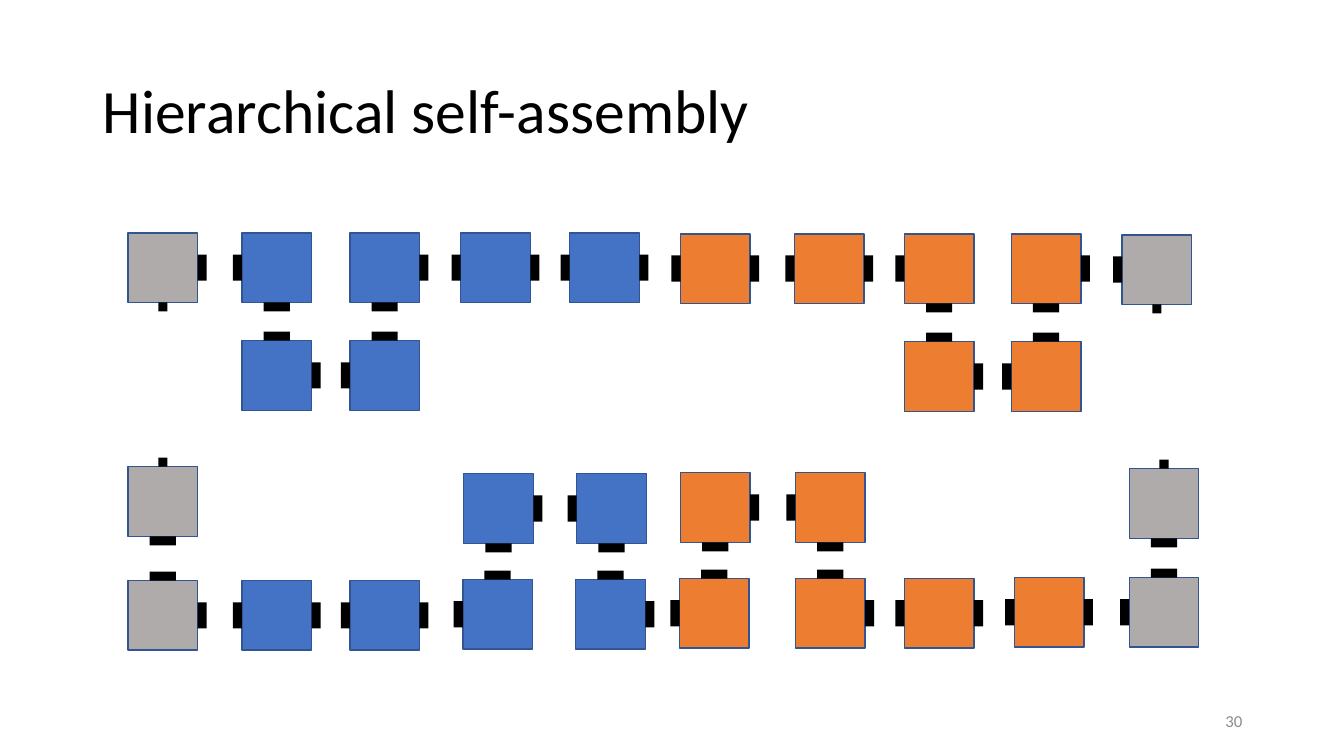
import pptx
import pptx.util
import pptx.dml.color
import pptx.enum.text
import pptx.enum.shapes

# Slide: a grid of 1333 columns by 750 rows
cell = pptx.util.Inches(0.01)
deck = pptx.Presentation()
deck.slide_width = 1333 * cell
deck.slide_height = 750 * cell
slide = deck.slides.add_slide(deck.slide_layouts[5])

BLUE, ORANGE, GREY = "4472C4", "ED7D31", "AFABAB"
SIDE, LONG, THIN = 69, 26, 9


def paint(part, tint):
    part.rgb = pptx.dml.color.RGBColor.from_string(tint)


def block(group, col, row, wide, high, tint, edge=None):
    rect = group.shapes.add_shape(
        pptx.enum.shapes.MSO_SHAPE.RECTANGLE,
        *(round(n * cell) for n in (col, row, wide, high)))
    rect.shadow.inherit = False
    rect.fill.solid()
    paint(rect.fill.fore_color, tint)
    if edge:
        paint(rect.line.color, edge)
        rect.line.width = pptx.util.Pt(1)
    else:
        rect.line.fill.background()


# Title and page number
page = slide.shapes.add_textbox(0, 0, cell, cell)
align = pptx.enum.text.PP_ALIGN
texts = [
    (slide.shapes.title, "Hierarchical self-assembly", (92, 40, 666, 145),
     44, "000000", {"alignment": align.LEFT, "line_spacing": 0.9}),
    (page, "30", (942, 695, 300, 40),
     12, "8C8C8C", {"alignment": align.RIGHT}),
]
for box, words, place, size, tint, form in texts:
    for name, n in zip(("left", "top", "width", "height"), place):
        setattr(box, name, n * cell)
    frame = box.text_frame
    frame.text = words
    frame.word_wrap = True
    frame.vertical_anchor = pptx.enum.text.MSO_ANCHOR.MIDDLE
    para = frame.paragraphs[0]
    for name, value in form.items():
        setattr(para, name, value)
    font = para.runs[0].font
    for name, value in {"name": "Calibri", "size": pptx.util.Pt(size)}.items():
        setattr(font, name, value)
    paint(font.color, tint)

# Tiles: colour, row, then each column with the sides that carry glue
# (N, E, S, W are strong; n and s are weak)
tiles = [
    (GREY, 231, {127: "Es"}),
    (BLUE, 231, {240: "WS", 347: "ES", 457: "WE", 565: "WE"}),
    (ORANGE, 232, {675: "WE", 788: "WE", 897: "WS", 1003: "ES"}),
    (GREY, 233, {1113: "Ws"}),
    (BLUE, 338, {240: "NE", 347: "NW"}),
    (ORANGE, 339, {897: "NE", 1003: "NW"}),
    (GREY, 463, {127: "nS"}),
    (BLUE, 470, {460: "SE", 572: "SW"}),
    (ORANGE, 469, {675: "SE", 789: "SW"}),
    (GREY, 465, {1120: "nS"}),
    (GREY, 576, {127: "EN"}),
    (BLUE, 576, {240: "WE", 347: "EW"}),
    (BLUE, 575, {459: "NW", 571: "NE"}),
    (ORANGE, 574, {674: "NW", 789: "NE", 897: "WE"}),
    (ORANGE, 573, {1006: "WE"}),
    (GREY, 573, {1120: "WN"}),
]
steps = {"N": (0, -1), "E": (1, 0), "S": (0, 1), "W": (-1, 0)}
for tint, row, spots in tiles:
    for col, sides in spots.items():
        group = slide.shapes.add_group_shape()
        block(group, col, row, SIDE, SIDE, tint, "325491")
        for side in sides:
            across, down = steps[side.upper()]
            span = LONG if side.isupper() else THIN
            wide, high = (THIN, span) if across else (span, THIN)
            # Glue sits against the middle of its side
            reach = (SIDE + THIN) / 2
            block(group, col + SIDE / 2 + across * reach - wide / 2,
                  row + SIDE / 2 + down * reach - high / 2,
                  wide, high, "000000")

deck.save("out.pptx")
